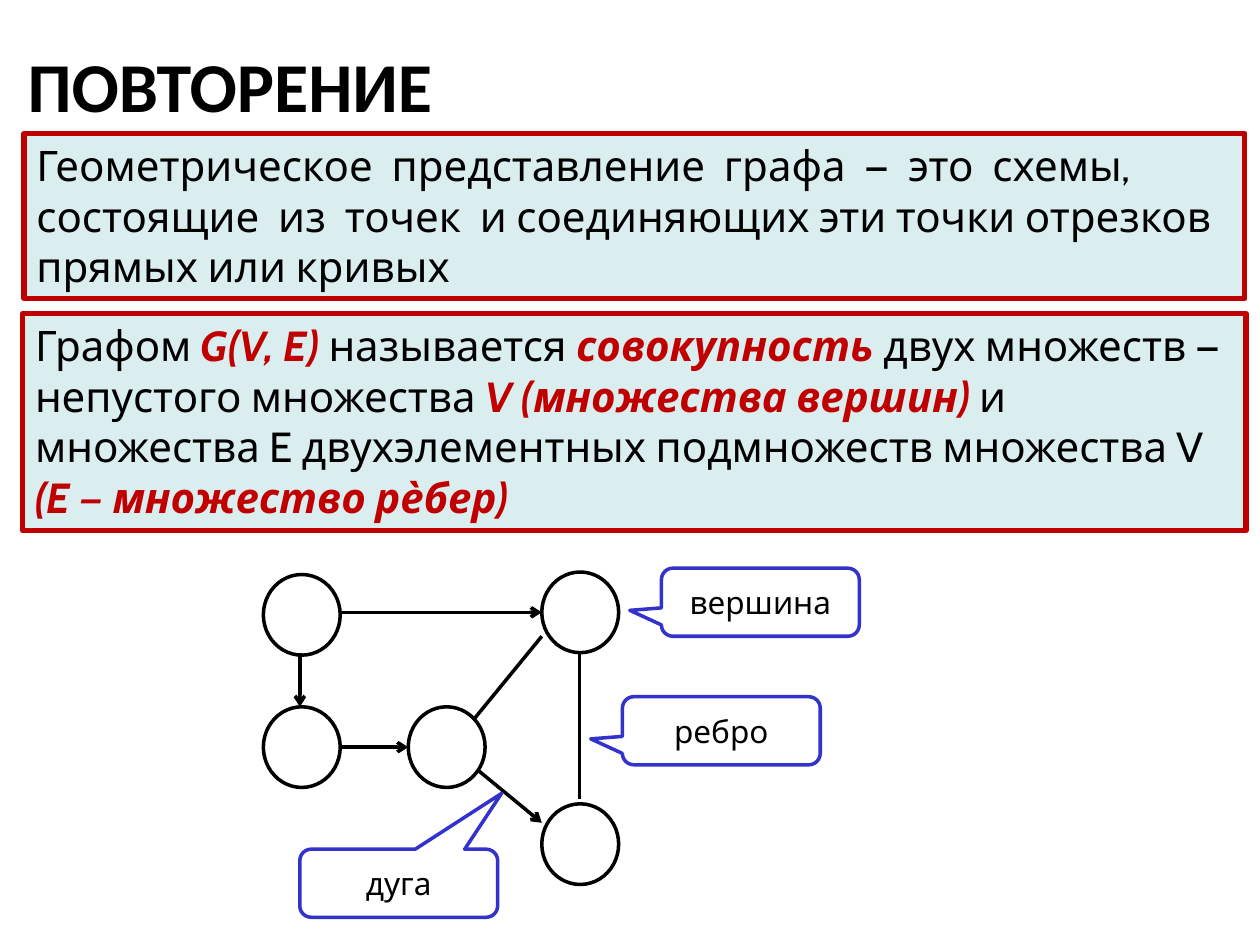
import pptx
import pptx.dml.color
import pptx.enum.shapes
import pptx.enum.text
import pptx.oxml
import pptx.oxml.ns
import pptx.util

BLACK, WHITE, RED, PALE, BLUE = "000000", "FFFFFF", "C00000", "DAEDEF", "3333CC"
SHAPES = pptx.enum.shapes.MSO_SHAPE

presentation = pptx.Presentation()
presentation.slide_width = pptx.util.Inches(10)
presentation.slide_height = pptx.util.Inches(7.5)
slide = presentation.slides.add_slide(presentation.slide_layouts[6])

# Grid of 100 columns by 75 rows of square cells
cell = presentation.slide_width / 100


def colour(value):
    return pptx.dml.color.RGBColor.from_string(value)


def add_outlined(kind, columns_rows, fill, line, width):
    shape = slide.shapes.add_shape(kind, *[round(n * cell) for n in columns_rows])
    shape.shadow.inherit = False
    shape.fill.solid()
    shape.fill.fore_color.rgb = colour(fill)
    shape.line.color.rgb = colour(line)
    shape.line.width = pptx.util.Pt(width)
    shape.text_frame.word_wrap = True
    return shape


# Title
title = slide.shapes.add_textbox(*[round(n * cell) for n in (1.2, 2.9, 96.9, 7.7)])
title.text_frame.word_wrap = True
title.text_frame.text = "ПОВТОРЕНИЕ"
font = title.text_frame.paragraphs[0].runs[0].font
font.name, font.size, font.bold = "Calibri", pptx.util.Pt(40), True
font.color.rgb = colour(BLACK)

# Definitions: each run is a text and whether it is emphasised
definitions = [
    ((1.9, 10.6, 96.9, 13.1), [
        ("Геометрическое  представление  графа  —  это  схемы,  состоящие  из  точек  "
         "и соединяющих эти точки отрезков прямых или кривых", False),
    ]),
    ((1.8, 24.9, 97.1, 17.2), [
        ("Графом ", False),
        ("G(V, E)", True),
        (" называется ", False),
        ("совокупность ", True),
        ("двух множеств — непустого множества ", False),
        ("V (множества вершин)", True),
        (" и множества E двухэлементных подмножеств множества V ", False),
        ("(E — множество рѐбер)", True),
    ]),
]
for columns_rows, runs in definitions:
    box = add_outlined(SHAPES.RECTANGLE, columns_rows, PALE, RED, 3)
    box.text_frame.vertical_anchor = pptx.enum.text.MSO_ANCHOR.TOP
    paragraph = box.text_frame.paragraphs[0]
    paragraph.alignment = pptx.enum.text.PP_ALIGN.LEFT
    for text, emphasised in runs:
        run = paragraph.add_run()
        run.text = text
        run.font.name, run.font.size = "Cabin", pptx.util.Pt(24)
        run.font.bold = run.font.italic = emphasised
        run.font.color.rgb = colour(RED if emphasised else BLACK)

# Graph vertices
for column, row in [(20.9, 45.6), (43, 45.4), (32.4, 56.1), (43, 63.8), (20.9, 56.1)]:
    add_outlined(SHAPES.OVAL, (column, row, 6.1, 6.4), WHITE, BLACK, 2)

# Graph arcs (with an arrowhead) and edges
links = [
    ((27, 48.6, 43, 48.6), True),
    ((23.8, 51.8, 23.8, 56.1), True),
    ((26.9, 59.3, 32.4, 59.3), True),
    ((37.9, 61.1, 43, 65.3), True),
    ((43, 50.5, 37.6, 57.1), False),
    ((46, 51.9, 46, 63.4), False),
]
for ends, directed in links:
    link = slide.shapes.add_connector(
        pptx.enum.shapes.MSO_CONNECTOR.STRAIGHT, *[round(n * cell) for n in ends])
    link.line.color.rgb = colour(BLACK)
    link.line.width = pptx.util.Pt(2)
    if directed:
        head = pptx.oxml.parse_xml(
            f'<a:tailEnd {pptx.oxml.ns.nsdecls("a")} type="arrow"/>')
        link.line._get_or_add_ln().append(head)
    link._element.spPr.append(
        pptx.oxml.parse_xml(f'<a:effectLst {pptx.oxml.ns.nsdecls("a")}/>'))

# Callouts: text, column, row, pointer offset
callouts = [
    ("вершина", 52.5, 45.1, (-0.66, 0.12)),
    ("ребро", 49.4, 55.3, (-0.66, 0.12)),
    ("дуга", 23.8, 67.4, (0.52, -1.32)),
]
for text, column, row, pointer in callouts:
    callout = add_outlined(SHAPES.ROUNDED_RECTANGULAR_CALLOUT,
                           (column, row, 15.7, 5.4), WHITE, BLUE, 2)
    callout.adjustments[0], callout.adjustments[1] = pointer
    callout.text_frame.text = text
    callout.text_frame.vertical_anchor = pptx.enum.text.MSO_ANCHOR.MIDDLE
    paragraph = callout.text_frame.paragraphs[0]
    paragraph.alignment = pptx.enum.text.PP_ALIGN.CENTER
    font = paragraph.runs[0].font
    font.name, font.size = "Cabin", pptx.util.Pt(18)
    font.color.rgb = colour(BLACK)

presentation.save("out.pptx")
